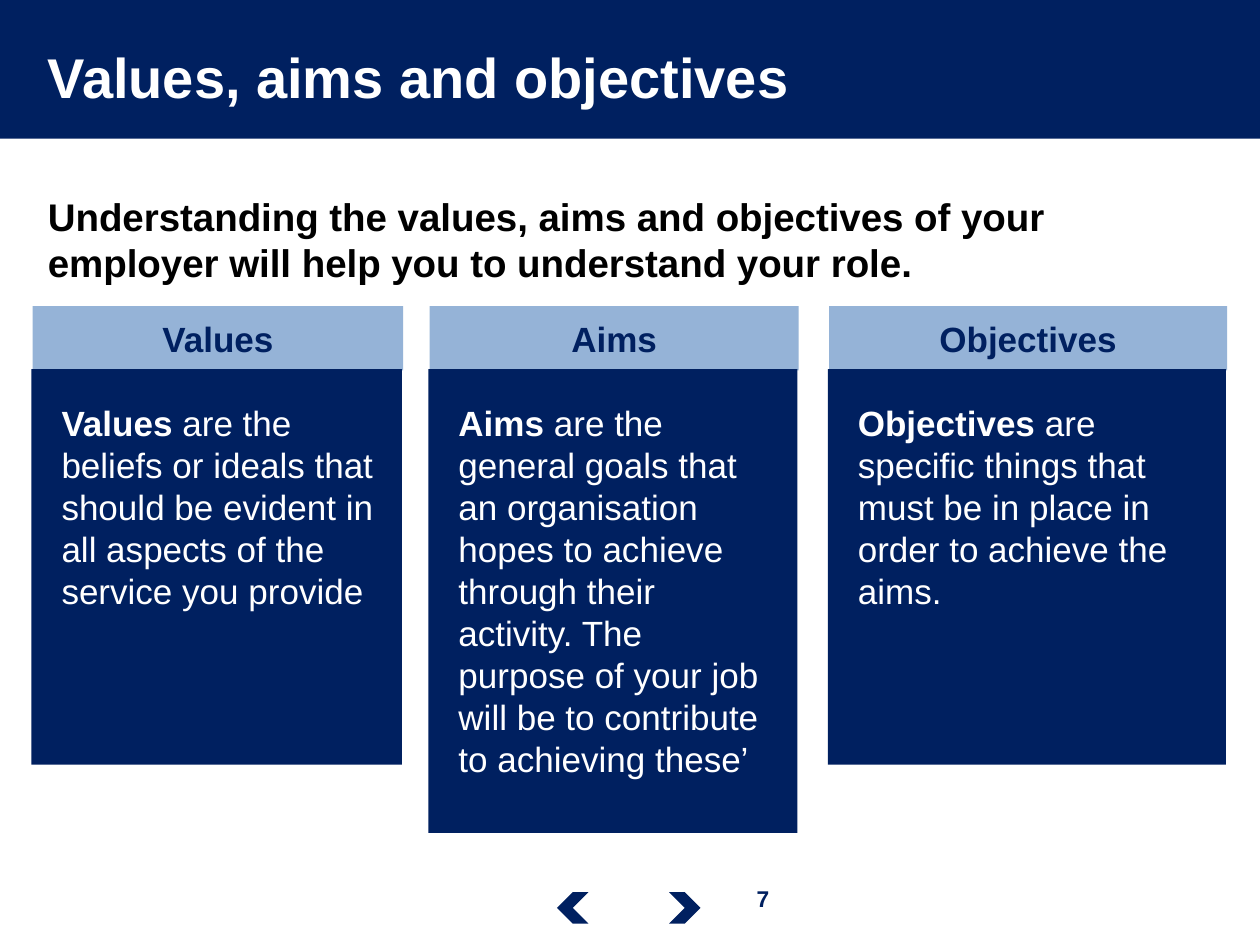
from dataclasses import dataclass

from lxml import etree
from pptx import Presentation
from pptx import util as u
from pptx.dml.color import RGBColor
from pptx.enum import shapes, text
from pptx.oxml.ns import qn


@dataclass(frozen=True)
class Theme:
    font: str = "Arial"
    navy: str = "002060"
    sky: str = "95B3D7"
    white: str = "FFFFFF"
    black: str = "000000"
    title: int = 32
    lead: int = 22
    card: int = 20
    page: int = 13


LEFT, MID = text.PP_ALIGN.LEFT, text.PP_ALIGN.CENTER
TOP, CORE = text.MSO_ANCHOR.TOP, text.MSO_ANCHOR.MIDDLE
RECT, ARROW = shapes.MSO_SHAPE.RECTANGLE, shapes.MSO_SHAPE.CHEVRON


class Deck:
    def __init__(self, theme):
        self.theme = theme
        self.file = Presentation()
        self.file.slide_width, self.file.slide_height = u.Inches(10), u.Inches(7.5)
        self.slide = self.file.slides.add_slide(self.file.slide_layouts[1])

    def words(self, shape, paras, size, color, align=LEFT, anchor=TOP, top=0.05):
        frame = shape.text_frame
        form = {
            "word_wrap": True,
            "auto_size": text.MSO_AUTO_SIZE.NONE,
            "vertical_anchor": anchor,
            "margin_left": u.Inches(0.1),
            "margin_right": u.Inches(0.1),
            "margin_top": u.Inches(top),
            "margin_bottom": u.Inches(0.05),
        }
        for key, value in form.items():
            setattr(frame, key, value)
        for i, runs in enumerate(paras):
            para = frame.add_paragraph() if i else frame.paragraphs[0]
            para.alignment = align
            para.space_before = u.Pt(0)
            for part, bold in runs:
                run = para.add_run()
                run.text = part
                font = {"name": self.theme.font, "size": u.Pt(size), "bold": bold}
                for key, value in font.items():
                    setattr(run.font, key, value)
                run.font.color.rgb = RGBColor.from_string(color)

    def holder(self, index, box, paras, size, color, **form):
        shape = self.slide.placeholders[index]
        for key, value in zip(("left", "top", "width", "height"), box):
            setattr(shape, key, u.Inches(value))
        props = shape.text_frame.paragraphs[0]._p.get_or_add_pPr()
        props.set("marL", "0")
        props.set("indent", "0")
        etree.SubElement(props, qn("a:buNone"))
        self.words(shape, paras, size, color, **form)

    def block(self, box, fill, kind=RECT, turn=0):
        shape = self.slide.shapes.add_shape(kind, *map(u.Inches, box))
        shape.shadow.inherit = False
        shape.fill.solid()
        shape.fill.fore_color.rgb = RGBColor.from_string(fill)
        shape.line.fill.background()
        shape.rotation = turn
        return shape

    def banner(self, box, fill):
        node = self.block(box, fill)._element
        node.getparent().insert(2, node)

    def label(self, box, paras, size, color, **form):
        shape = self.slide.shapes.add_textbox(*map(u.Inches, box))
        self.words(shape, paras, size, color, **form)

    def card(self, left, width, height, inner, head, paras):
        look = self.theme
        bar = self.block((left + 0.01, 2.43, width, 0.51), look.sky)
        self.words(bar, [[(head, True)]], look.card, look.navy, align=MID, anchor=CORE)
        self.block((left, 2.93, width, height), look.navy)
        self.label((left + 0.14, 3.14, inner, height - 0.55), paras, look.card, look.white)


CARDS = [
    (0.25, 2.94, 3.14, 2.7, "Values", [
        [("Values ", True), ("are the beliefs or ideals that should be evident in "
                             "all aspects of the service you provide", False)]]),
    (3.4, 2.93, 3.68, 2.59, "Aims", [
        [("Aims ", True), ("are the", False)],
        [("general goals that an organisation hopes to achieve through their activity. "
          "The purpose of your job will be to contribute to achieving these’", False)]]),
    (6.57, 3.16, 3.14, 2.79, "Objectives", [
        [("Objectives ", True), ("are specific things that must be in place "
                                 "in order to achieve the aims.", False)]]),
]


def main():
    look = Theme()
    deck = Deck(look)
    deck.banner((-0.02, 0, 10.02, 1.1), look.navy)
    deck.holder(0, (0.28, 0.1, 7.9, 1.01), [[("Values, aims and objectives", True)]],
                look.title, look.white, anchor=CORE)
    lead = ("Understanding the values, aims and objectives of your employer "
            "will help you to understand your role.")
    deck.holder(1, (0.28, 1.44, 9.46, 4.95), [[(lead, True)]],
                look.lead, look.black, top=0.09)
    for card in CARDS:
        deck.card(*card)
    for left, turn in ((4.42, 180), (5.31, 0)):
        deck.block((left, 7.08, 0.25, 0.25), look.navy, ARROW, turn)
    deck.label((5.7, 6.97, 0.71, 0.32), [[("7", True)]], look.page, look.navy, align=MID)
    deck.file.save("out.pptx")


if __name__ == "__main__":
    main()
